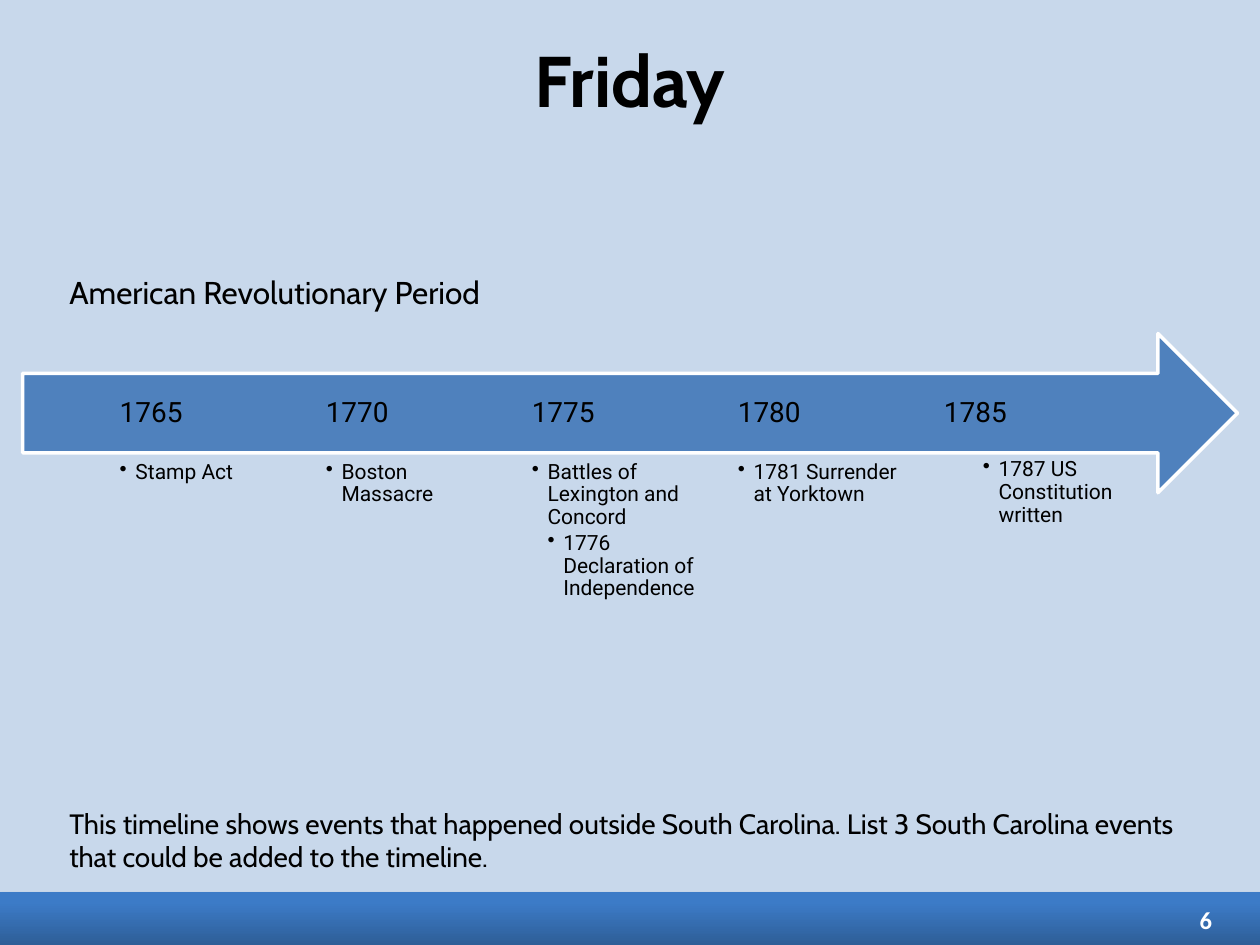
from dataclasses import dataclass

from copy import deepcopy
from lxml.etree import SubElement
from pptx import Presentation
from pptx.dml.color import RGBColor
from pptx.enum.shapes import MSO_SHAPE
from pptx.enum.text import MSO_ANCHOR, PP_ALIGN
from pptx.oxml.ns import qn
from pptx.util import Pt


@dataclass(frozen=True)
class Theme:
    background: str = "C8D8EB"
    blue: str = "4F81BD"
    white: str = "FFFFFF"
    black: str = "000000"
    footer_stops: tuple = ((0, "2E5E97"), (0.8, "3C7BC7"), (1, "3A7CCA"))
    heading_font: str = "Cabin"
    number_font: str = "Calibri"
    timeline_font: str = "Roboto"
    title_size: float = 41
    period_size: float = 18
    body_size: float = 16
    year_size: float = 16
    event_size: float = 12
    number_size: float = 14


THEME = Theme()

FIRST_LEFT = 68.4
COLUMN_PITCH = 117.75
COLUMN_WIDTH = 98
INDENT = 9
EVENT_TOP = 263.5

TIMELINE = [
    ("1765", ["Stamp Act"], (0, 0)),
    ("1770", ["Boston Massacre"], (0, 0)),
    ("1775", ["Battles of Lexington and Concord", "1776 Declaration of Independence"], (0, 0)),
    ("1780", ["1781 Surrender at Yorktown"], (0, 0)),
    ("1785", ["1787 US Constitution written"], (22.2, -1.5)),
]


def color(value):
    return RGBColor.from_string(value)


def set_bullet(para, level):
    para.level = level
    properties = para._p.get_or_add_pPr()
    properties.set("marL", str(Pt(INDENT * level)))
    properties.set("indent", str(-Pt(INDENT)))
    SubElement(properties, qn("a:buChar"), char="•")


def add_text(page, lines, area, *, size, font, fill=THEME.black, bold=False,
             align=PP_ALIGN.LEFT, anchor=MSO_ANCHOR.TOP, margins=(3.6, 3.6),
             wrap=True, before=0, after=0, line_spacing=1.0, bulleted=False):
    box = page.shapes.add_textbox(*map(Pt, area))
    frame = box.text_frame
    frame.word_wrap = wrap
    frame.vertical_anchor = anchor
    frame.margin_left = frame.margin_right = Pt(margins[0])
    frame.margin_top = frame.margin_bottom = Pt(margins[1])
    for index, line in enumerate(lines):
        para = frame.paragraphs[0] if index == 0 else frame.add_paragraph()
        para.alignment = align
        para.line_spacing = line_spacing
        para.space_before = Pt(before)
        para.space_after = Pt(after)
        if bulleted:
            set_bullet(para, index + 1)
        span = para.add_run()
        span.text = line
        span.font.size = Pt(size)
        span.font.name = font
        span.font.bold = bold
        span.font.color.rgb = color(fill)
    return box


def add_footer_band(page):
    band = page.shapes.add_shape(MSO_SHAPE.RECTANGLE, Pt(0), Pt(509.8), Pt(720), Pt(30.2))
    band.line.fill.background()
    band.fill.gradient()
    band.fill.gradient_angle = 90
    stop_list = band._element.spPr.find(".//" + qn("a:gsLst"))
    stop_list.append(deepcopy(stop_list[-1]))
    for stop, (position, value) in zip(band.fill.gradient_stops, THEME.footer_stops):
        stop.position = position
        stop.color.rgb = color(value)
    band.shadow.inherit = False
    effects = band._element.spPr.find(qn("a:effectLst"))
    shadow = SubElement(effects, qn("a:outerShdw"), blurRad=str(Pt(3)),
                        dist=str(Pt(1.8)), dir="5400000", rotWithShape="0")
    tint = SubElement(shadow, qn("a:srgbClr"), val=THEME.black)
    SubElement(tint, qn("a:alpha"), val="35000")


def add_timeline_arrow(page):
    arrow = page.shapes.add_shape(MSO_SHAPE.RIGHT_ARROW, Pt(13), Pt(190.6), Pt(694.2), Pt(91))
    arrow.shadow.inherit = False
    arrow.fill.solid()
    arrow.fill.fore_color.rgb = color(THEME.blue)
    arrow.line.color.rgb = color(THEME.white)
    arrow.line.width = Pt(2)


def add_timeline(page):
    add_timeline_arrow(page)
    for column, (year, events, (shift_right, shift_down)) in enumerate(TIMELINE):
        left = FIRST_LEFT + column * COLUMN_PITCH
        add_text(page, [year], (left, 213.3, COLUMN_WIDTH, 45.5),
                 size=THEME.year_size, font=THEME.timeline_font, anchor=MSO_ANCHOR.MIDDLE,
                 margins=(0, 13), line_spacing=0.9, after=5.6)
        add_text(page, events, (left + shift_right, EVENT_TOP + shift_down, COLUMN_WIDTH, 67.5),
                 size=THEME.event_size, font=THEME.timeline_font, margins=(0, 0),
                 line_spacing=0.9, after=1.8, bulleted=True)


def main():
    deck = Presentation()
    deck.slide_width, deck.slide_height = Pt(720), Pt(540)
    page = deck.slides.add_slide(deck.slide_layouts[6])
    page.background.fill.solid()
    page.background.fill.fore_color.rgb = color(THEME.background)

    add_footer_band(page)
    add_text(page, ["Friday"], (36, 0, 648, 90), size=THEME.title_size,
             font=THEME.heading_font, bold=True, align=PP_ALIGN.CENTER,
             anchor=MSO_ANCHOR.MIDDLE)
    add_text(page, ["This timeline shows events that happened outside South Carolina. "
                    "List 3 South Carolina events that could be added to the timeline."],
             (36, 457.2, 648, 51.8), size=THEME.body_size, font=THEME.heading_font, before=6)
    add_text(page, ["6"], (679.7, 514.1, 16.6, 23), size=THEME.number_size,
             font=THEME.number_font, fill=THEME.white, bold=True, align=PP_ALIGN.RIGHT,
             anchor=MSO_ANCHOR.MIDDLE, wrap=False)
    add_timeline(page)
    add_text(page, ["American Revolutionary Period"], (36, 152.6, 257.8, 28.8),
             size=THEME.period_size, font=THEME.heading_font, wrap=False)
    deck.save("out.pptx")


if __name__ == "__main__":
    main()
